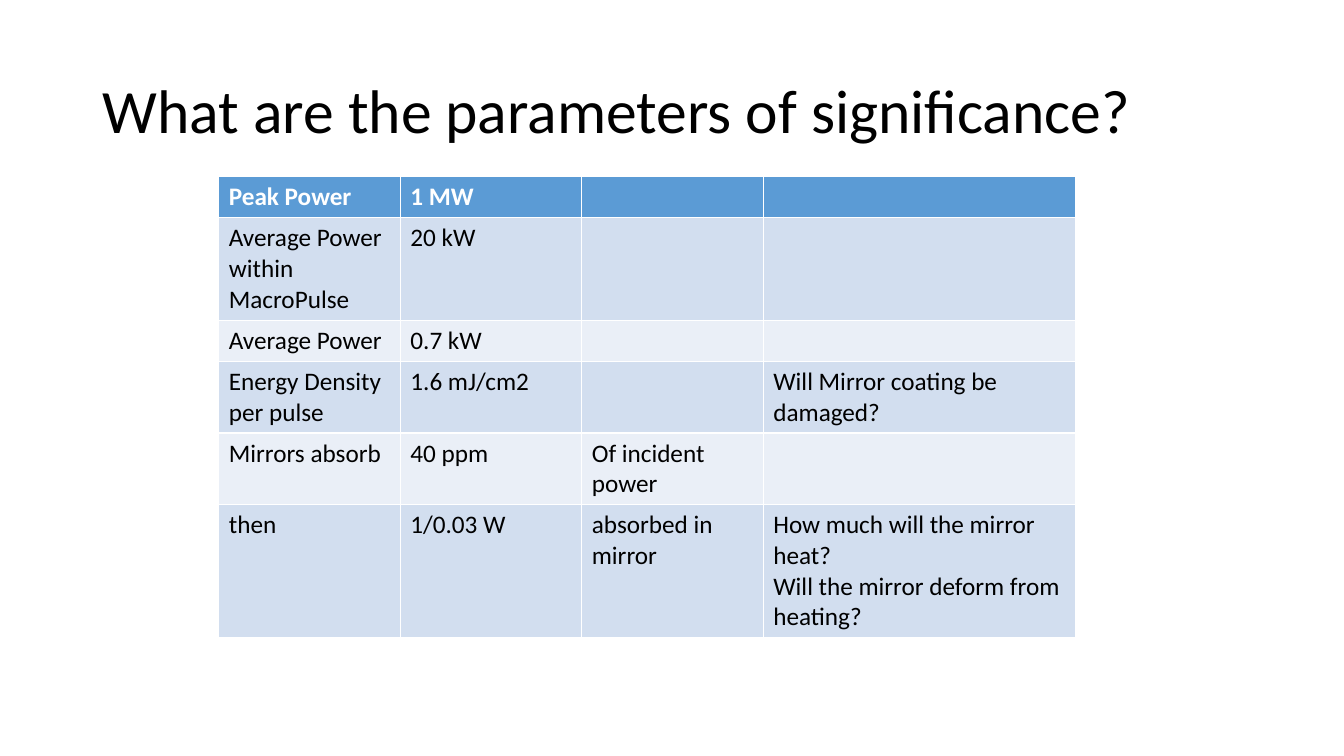
"""Build the slide with the table of mirror power parameters."""
import pptx
import pptx.util
import pptx.dml.color
import pptx.enum.text

Inches = pptx.util.Inches
HUES = {"head": "5B9BD5", "odd": "D2DEEF", "even": "EAEFF7",
        "white": "FFFFFF", "black": "000000"}
WIDTHS = [1.8, 1.8, 1.8, 3.1]
ROW = 0.41
ROWS = [
    ["Peak Power", "1 MW", "", ""],
    ["Average Power within MacroPulse", "20 kW", "", ""],
    ["Average Power", "0.7 kW", "", ""],
    ["Energy Density per pulse", "1.6 mJ/cm2", "", "Will Mirror coating be damaged?"],
    ["Mirrors absorb", "40 ppm", "Of incident power", ""],
    ["then", "1/0.03 W", "absorbed in mirror",
     "How much will the mirror heat?\nWill the mirror deform from heating?"],
]


def color(name):
    return pptx.dml.color.RGBColor.from_string(HUES[name])


def write(para, text, size, hue, bold=False):
    run = para.add_run()
    run.text = text
    run.font.name = "Calibri"
    run.font.size = pptx.util.Pt(size)
    run.font.bold = bold
    run.font.color.rgb = color(hue)


deck = pptx.Presentation()
deck.slide_width, deck.slide_height = Inches(13.33), Inches(7.5)
slide = deck.slides.add_slide(deck.slide_layouts[5])

title = slide.shapes.title
title.left, title.top = Inches(0.92), Inches(0.4)
title.width, title.height = Inches(11.5), Inches(1.45)
title.text_frame.vertical_anchor = pptx.enum.text.MSO_ANCHOR.MIDDLE
para = title.text_frame.paragraphs[0]
para.alignment = pptx.enum.text.PP_ALIGN.LEFT
para.line_spacing = 0.9
write(para, "What are the parameters of significance?", 44, "black")

frame = slide.shapes.add_table(len(ROWS), len(WIDTHS), Inches(2.17), Inches(1.75),
                               Inches(sum(WIDTHS)), Inches(ROW * len(ROWS)))
table = frame.table
for col, width in zip(table.columns, WIDTHS):
    col.width = Inches(width)
for r, texts in enumerate(ROWS):
    table.rows[r].height = Inches(ROW)
    head = r == 0
    band = "head" if head else "odd" if r % 2 else "even"
    for c, text in enumerate(texts):
        cell = table.cell(r, c)
        cell.fill.solid()
        cell.fill.fore_color.rgb = color(band)
        body = cell.text_frame
        for i, line in enumerate(text.splitlines()):
            para = body.add_paragraph() if i else body.paragraphs[0]
            write(para, line, 18, "white" if head else "black", head)
frame.height = Inches(4.51)

deck.save("out.pptx")
